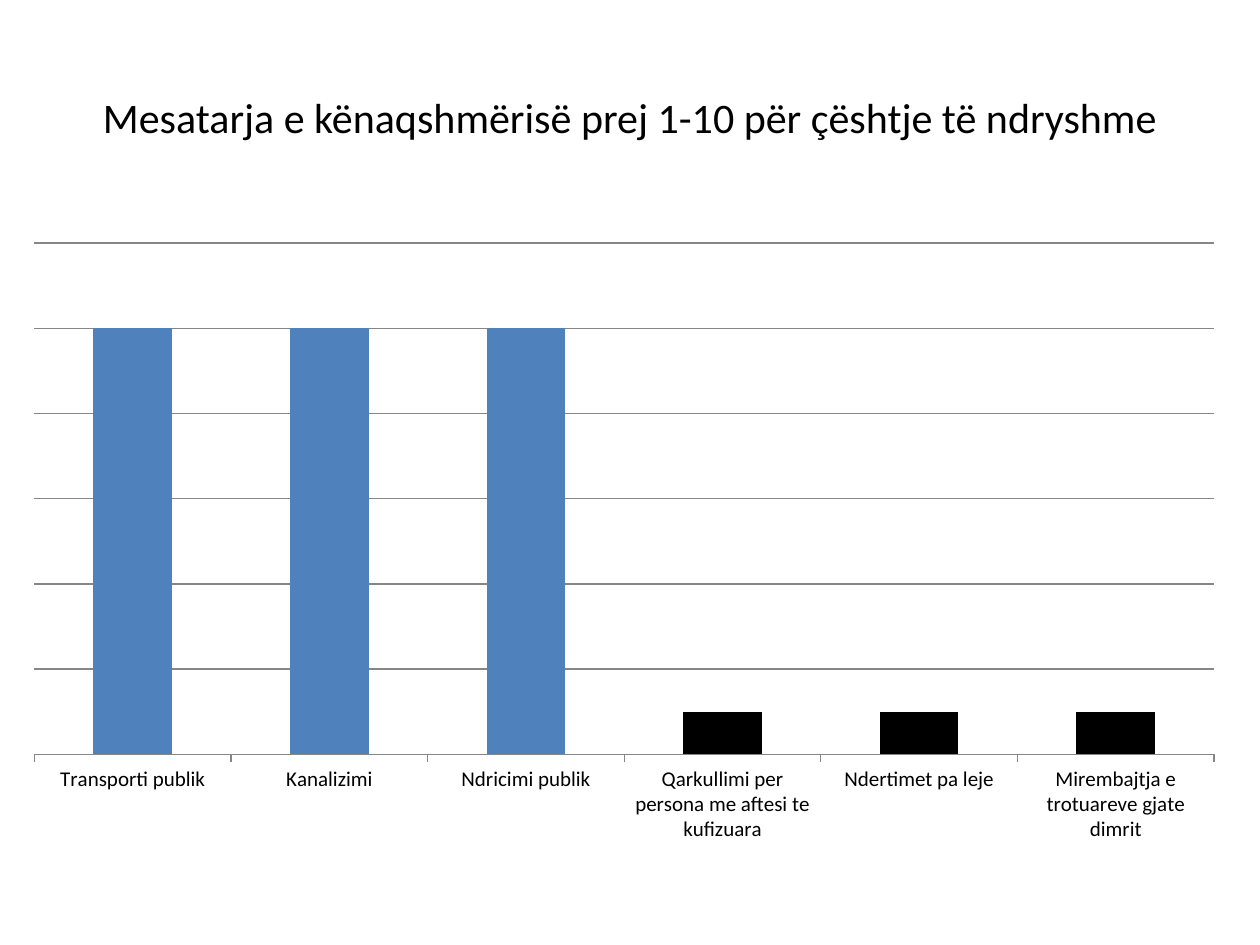
from pptx import Presentation
from pptx.chart.data import CategoryChartData
from pptx.dml.color import RGBColor
from pptx.enum.chart import XL_CHART_TYPE as ChartType, XL_TICK_MARK as TickMark
from pptx.enum.text import MSO_ANCHOR as Anchor, PP_ALIGN as Align
from pptx.util import Cm, Pt

# Content
HEADING = "Mesatarja e kënaqshmërisë prej 1-10 për çështje të ndryshme"
SERIES_NAME = "Series 1"
SATISFACTION = [
    ("Transporti publik", 100),
    ("Kanalizimi", 100),
    ("Ndricimi publik", 100),
    ("Qarkullimi per persona me aftesi te kufizuara", 10),
    ("Ndertimet pa leje", 10),
    ("Mirembajtja e trotuareve gjate dimrit", 10),
]
HIGH, LOW, TEXT, GRID = "4F81BD", "000000", "000000", "868686"
FONT = "Calibri"


def color(hex_value):
    return RGBColor.from_string(hex_value)


def style_font(font, size, hex_value=TEXT):
    font.name, font.size, font.bold = FONT, Pt(size), False
    font.color.rgb = color(hex_value)


def write(frame, text, size=18, align=Align.LEFT, anchor=Anchor.TOP):
    frame.word_wrap = True
    frame.vertical_anchor = anchor
    paragraph = frame.paragraphs[0]
    paragraph.alignment = align
    run = paragraph.add_run()
    run.text = text
    style_font(run.font, size)


def fill(part, hex_value):
    part.format.fill.solid()
    part.format.fill.fore_color.rgb = color(hex_value)


def rule(line):
    line.color.rgb = color(GRID)
    line.width = Pt(0.75)


prs = Presentation()
prs.slide_width, prs.slide_height = Cm(25.4), Cm(19.05)
slide = prs.slides.add_slide(prs.slide_layouts[5])

# Title
heading = slide.shapes.title
heading.left, heading.top = Cm(1.27), Cm(0.76)
heading.width, heading.height = Cm(22.86), Cm(3.18)
write(heading.text_frame, HEADING, size=24, align=Align.CENTER, anchor=Anchor.MIDDLE)

# Satisfaction chart
data = CategoryChartData()
data.categories = [topic for topic, _ in SATISFACTION]
data.add_series(SERIES_NAME, [score for _, score in SATISFACTION])
chart = slide.shapes.add_chart(
    ChartType.COLUMN_CLUSTERED, Cm(0.2), Cm(4.65), Cm(24.77), Cm(12.57), data
).chart
chart.has_legend = False
chart.has_title = False
style_font(chart.font, 18)

# Columns, with the low scores in black
columns = chart.plots[0]
columns.gap_width = 150
columns.vary_by_categories = False
scores = columns.series[0]
scores.invert_if_negative = False
fill(scores, HIGH)
for index, (_, score) in enumerate(SATISFACTION):
    if score < 50:
        fill(scores.points[index], LOW)

# Axes
topics = chart.category_axis
topics.major_tick_mark = TickMark.OUTSIDE
style_font(topics.tick_labels.font, 12)
rule(topics.format.line)

scale = chart.value_axis
scale.minimum_scale, scale.maximum_scale, scale.major_unit = 0, 120, 20
scale.has_major_gridlines = True
rule(scale.major_gridlines.format.line)
scale.visible = False

prs.save("out.pptx")
